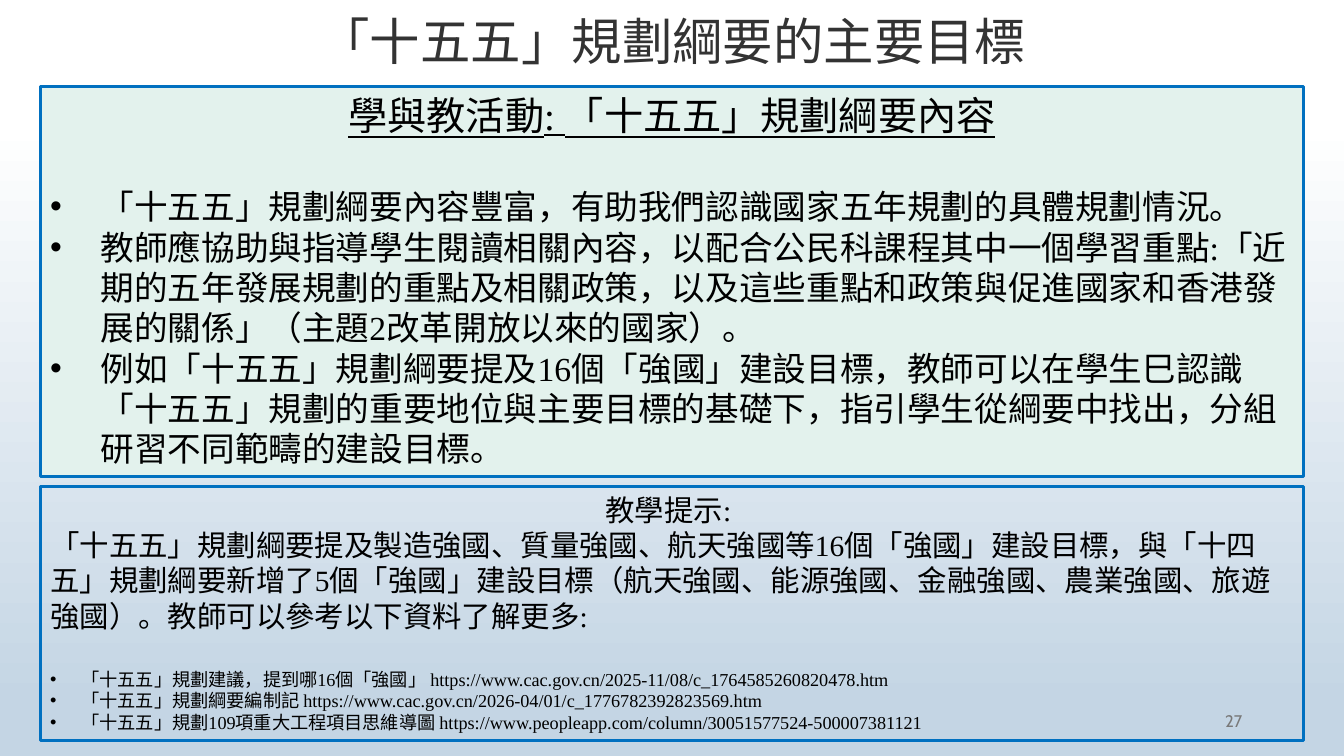
from lxml import etree
from pptx import Presentation
from pptx import util as u
from pptx.dml.color import RGBColor
from pptx.enum import shapes, text
from pptx.oxml.ns import qn

WHITE = RGBColor(0xFF, 0xFF, 0xFF)
SKY = RGBColor(0xC4, 0xD5, 0xE4)
MINT = RGBColor(0xE3, 0xF2, 0xED)
BLUE = RGBColor(0x00, 0x70, 0xC0)
BLACK = RGBColor(0, 0, 0)
DARK = RGBColor(0x33, 0x33, 0x33)
GREY = RGBColor(0x79, 0x79, 0x79)

LATIN, CJK = "Times New Roman", "Noto Sans CJK SC"
LINE = 1.2
W, H = 13.33, 7.5
MARGIN = 0.4
PANEL_W = W - 2 * MARGIN

CENTER = text.PP_ALIGN.CENTER
LEFT = text.PP_ALIGN.LEFT
RIGHT = text.PP_ALIGN.RIGHT

HEADING = "學與教活動: 「十五五」規劃綱要內容"
ACTIVITIES = [
    "「十五五」規劃綱要內容豐富，有助我們認識國家五年規劃的具體規劃情況。",
    "教師應協助與指導學生閱讀相關內容，以配合公民科課程其中一個學習重點:"
    "「近期的五年發展規劃的重點及相關政策，以及這些重點和政策與促進國家和香港發展的關係」"
    "（主題2改革開放以來的國家）。",
    "例如「十五五」規劃綱要提及16個「強國」建設目標，教師可以在學生巳認識"
    "「十五五」規劃的重要地位與主要目標的基礎下，指引學生從綱要中找出，"
    "分組研習不同範疇的建設目標。",
]
TIP_HEADING = "教學提示: "
TIP = ("「十五五」規劃綱要提及製造強國、質量強國、航天強國等16個「強國」建設目標，"
       "與「十四五」規劃綱要新增了5個「強國」建設目標"
       "（航天強國、能源強國、金融強國、農業強國、旅遊強國）。"
       "教師可以參考以下資料了解更多:")
SOURCES = [
    ("「十五五」規劃建議，提到哪16個「強國」 ",
     "https://www.cac.gov.cn/2025-11/08/c_1764585260820478.htm"),
    ("「十五五」規劃綱要編制記 ",
     "https://www.cac.gov.cn/2026-04/01/c_1776782392823569.htm"),
    ("「十五五」規劃109項重大工程項目思維導圖 ",
     "https://www.peopleapp.com/column/30051577524-500007381121"),
]


def add_paragraph(tf, runs, size, align=LEFT, color=BLACK, font=LATIN,
                  underline=False, indent=0, before=0):
    first = tf.paragraphs[0]
    p = tf.add_paragraph() if first.runs else first
    p.alignment = align
    p.line_spacing = u.Pt(round(size * LINE, 1))
    if before:
        p.space_before = u.Pt(before)
    if indent:
        pPr = p._p.get_or_add_pPr()
        pPr.set("marL", str(u.Inches(indent)))
        pPr.set("indent", str(-u.Inches(indent)))
        etree.SubElement(pPr, qn("a:buFont")).set("typeface", "Arial")
        etree.SubElement(pPr, qn("a:buChar")).set("char", "•")
    for words in runs:
        r = p.add_run()
        r.text = words
        r.font.size = u.Pt(size)
        r.font.name = font
        r.font.color.rgb = color
        r.font.underline = underline
        etree.SubElement(r._r.get_or_add_rPr(), qn("a:ea")).set("typeface", CJK)


def add_label(s, box, words, size, align, color, font=LATIN):
    sp = s.shapes.add_textbox(*map(u.Inches, box))
    tf = sp.text_frame
    tf.word_wrap = True
    tf.vertical_anchor = text.MSO_ANCHOR.MIDDLE
    add_paragraph(tf, [words], size, align, color, font)


def add_panel(s, box, fill=None):
    sp = s.shapes.add_shape(shapes.MSO_SHAPE.RECTANGLE, *map(u.Inches, box))
    sp.shadow.inherit = False
    if fill is None:
        sp.fill.background()
    else:
        sp.fill.solid()
        sp.fill.fore_color.rgb = fill
    sp.line.color.rgb = BLUE
    sp.line.width = u.Pt(2.25)
    tf = sp.text_frame
    tf.word_wrap = True
    tf.vertical_anchor = text.MSO_ANCHOR.TOP
    return tf


def add_activity(s, box):
    tf = add_panel(s, box, MINT)
    add_paragraph(tf, [HEADING], 28, CENTER, underline=True)
    for i, item in enumerate(ACTIVITIES):
        add_paragraph(tf, [item], 24, indent=0.5, before=0 if i else 34)


def add_tips(s, box):
    tf = add_panel(s, box)
    add_paragraph(tf, [TIP_HEADING], 21, CENTER)
    add_paragraph(tf, [TIP], 21)
    for i, source in enumerate(SOURCES):
        add_paragraph(tf, source, 13, indent=0.31, before=0 if i else 25)


def paint_background(s):
    fill = s.background.fill
    fill.gradient()
    fill.gradient_angle = 270
    for stop, position, color in zip(fill.gradient_stops, (0.16, 0.93), (WHITE, SKY)):
        stop.position = position
        stop.color.rgb = color


def main():
    prs = Presentation()
    prs.slide_width, prs.slide_height = u.Inches(W), u.Inches(H)
    s = prs.slides.add_slide(prs.slide_layouts[6])
    paint_background(s)
    add_label(s, (9.42, 6.95, 3, 0.4), "27", 12, RIGHT, GREY, "Cabin")
    add_label(s, (0.92, 0, 11.5, 0.8), "「十五五」規劃綱要的主要目標", 36, CENTER, DARK)
    add_activity(s, (MARGIN, 0.86, PANEL_W, 3.87))
    add_tips(s, (MARGIN, 4.83, PANEL_W, 2.52))
    prs.save("out.pptx")


if __name__ == "__main__":
    main()
